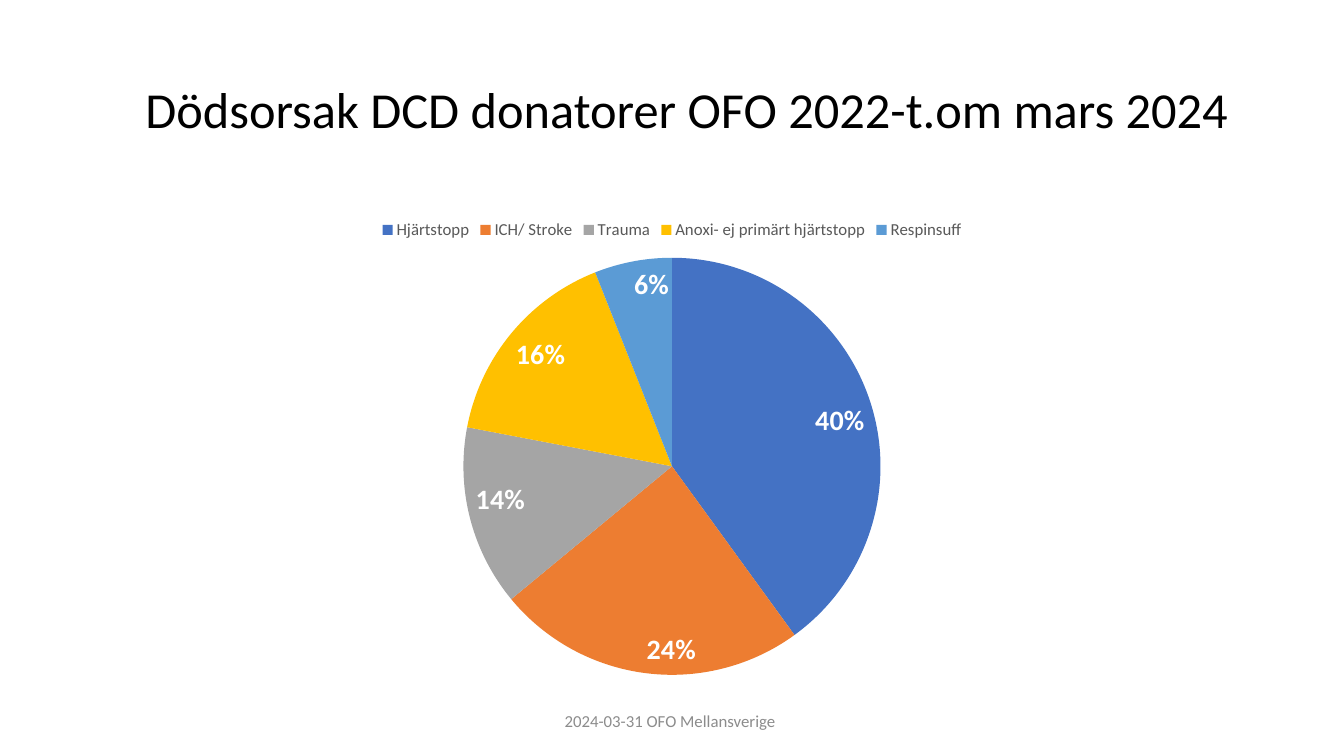
from pptx import Presentation
from pptx import util as u
from pptx.chart.data import CategoryChartData
from pptx.dml.color import RGBColor
from pptx.enum import chart as ch, text as t

BLACK = RGBColor(0x00, 0x00, 0x00)
WHITE = RGBColor(0xFF, 0xFF, 0xFF)
LEGEND_GREY = RGBColor(0x59, 0x59, 0x59)
FOOTER_GREY = RGBColor(0x8C, 0x8C, 0x8C)
BLUE = RGBColor(0x44, 0x72, 0xC4)
ORANGE = RGBColor(0xED, 0x7D, 0x31)
GREY = RGBColor(0xA5, 0xA5, 0xA5)
YELLOW = RGBColor(0xFF, 0xC0, 0x00)
LIGHT_BLUE = RGBColor(0x5B, 0x9B, 0xD5)

CAUSES = [
    ("Hjärtstopp", 40, BLUE),
    ("ICH/ Stroke", 24, ORANGE),
    ("Trauma", 14, GREY),
    ("Anoxi- ej primärt hjärtstopp", 16, YELLOW),
    ("Respinsuff", 6, LIGHT_BLUE),
]


class SlideBuilder:
    """Holds the typeface and the slide being filled."""

    def __init__(self, slide, typeface):
        self.slide = slide
        self.typeface = typeface

    def style(self, font, size, color, bold=False):
        font.name = self.typeface
        font.size = u.Pt(size)
        font.bold = bold
        font.color.rgb = color

    def fill_frame(self, frame, wording, size, color):
        frame.word_wrap = True
        frame.auto_size = t.MSO_AUTO_SIZE.NONE
        frame.vertical_anchor = t.MSO_ANCHOR.MIDDLE
        line = frame.paragraphs[0]
        line.text = wording
        line.alignment = t.PP_ALIGN.CENTER
        self.style(line.font, size, color)
        return line

    def title(self, wording, left, top, width, height):
        heading = self.slide.shapes.title
        heading.left, heading.top = u.Pt(left), u.Pt(top)
        heading.width, heading.height = u.Pt(width), u.Pt(height)
        self.fill_frame(heading.text_frame, wording, 36, BLACK).line_spacing = 0.9

    def label(self, wording, left, top, width, height):
        box = self.slide.shapes.add_textbox(*map(u.Pt, (left, top, width, height)))
        self.fill_frame(box.text_frame, wording, 12, FOOTER_GREY)

    def pie(self, slices, left, top, width, height):
        names, shares, colors = zip(*slices)
        data = CategoryChartData()
        data.categories = names
        data.add_series("Series 1", shares)
        pie = self.slide.shapes.add_chart(
            ch.XL_CHART_TYPE.PIE, *map(u.Pt, (left, top, width, height)), data
        ).chart
        pie.has_title = False
        self.style(pie.font, 10, BLACK)

        # Legend
        pie.has_legend = True
        pie.legend.position = ch.XL_LEGEND_POSITION.TOP
        pie.legend.include_in_layout = False
        self.style(pie.legend.font, 12, LEGEND_GREY)

        # Slices
        plot = pie.plots[0]
        plot.vary_by_categories = True
        for index, color in enumerate(colors):
            wedge = plot.series[0].points[index].format
            wedge.fill.solid()
            wedge.fill.fore_color.rgb = color
            wedge.line.fill.background()

        # Percentages
        percentages = plot.series[0].data_labels
        percentages.show_value = False
        percentages.show_percentage = True
        percentages.number_format = "0%"
        percentages.number_format_is_linked = False
        percentages.position = ch.XL_LABEL_POSITION.INSIDE_END
        self.style(percentages.font, 20, WHITE, bold=True)


def main():
    deck = Presentation()
    deck.slide_width, deck.slide_height = u.Pt(960), u.Pt(540)
    title_only = deck.slide_layouts[5]
    builder = SlideBuilder(deck.slides.add_slide(title_only), "Calibri")

    builder.title("Dödsorsak DCD donatorer OFO 2022-t.om mars 2024 ", 66, 29, 857.5, 102)
    builder.pie(CAUSES, 66, 149, 828, 343)
    builder.label("2024-03-31 OFO Mellansverige ", 318, 500.5, 324, 29)

    deck.save("out.pptx")


if __name__ == "__main__":
    main()
